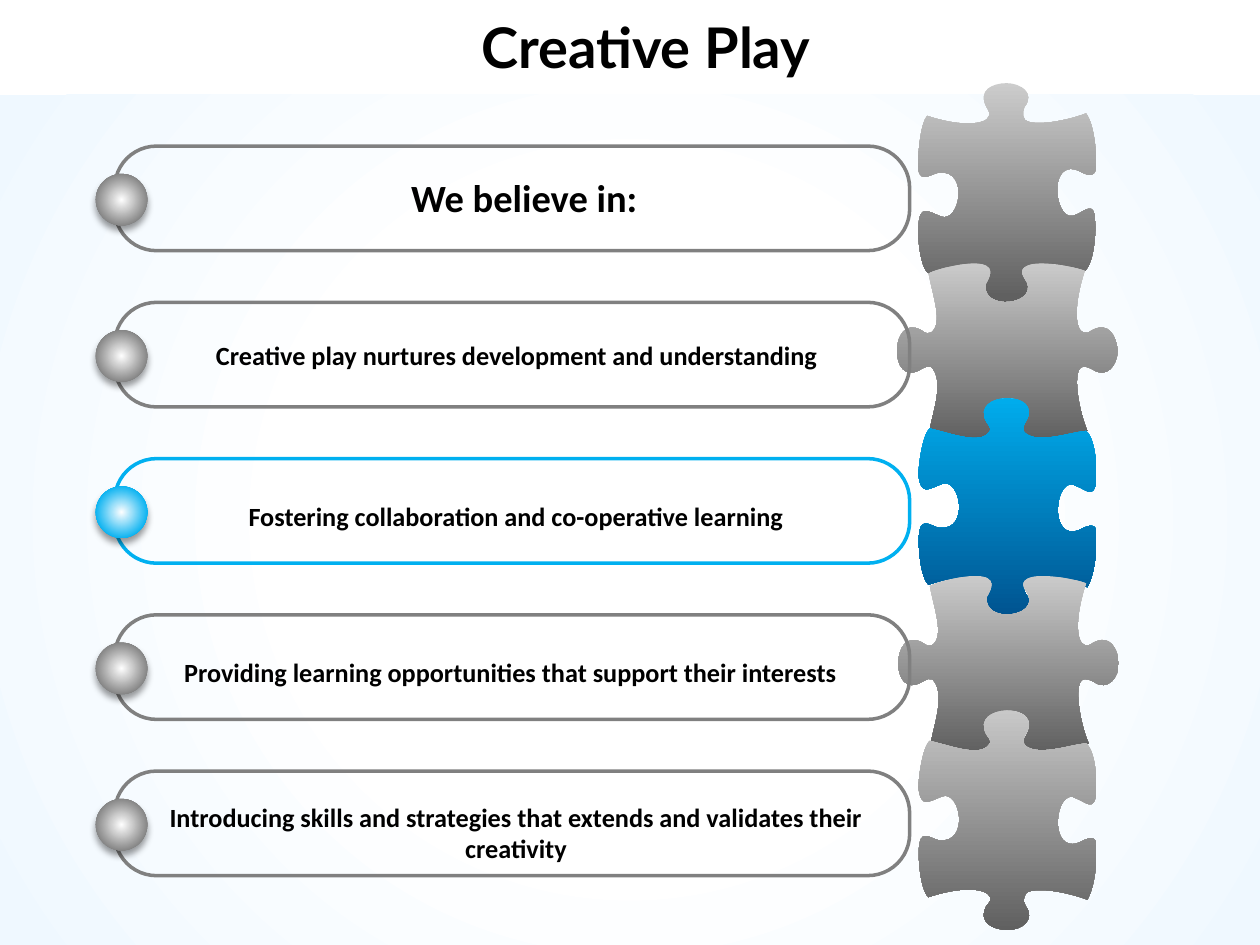
"""Build the Creative Play slide: five labelled pills beside a column of puzzle pieces."""
from lxml import etree
from pptx import Presentation
from pptx.dml.color import RGBColor
from pptx.enum.shapes import MSO_SHAPE
from pptx.enum.text import MSO_ANCHOR, PP_ALIGN
from pptx.oxml import parse_xml
from pptx.oxml.ns import nsdecls, qn
from pptx.util import Pt

RECT, PILL, BALL = MSO_SHAPE.RECTANGLE, MSO_SHAPE.ROUNDED_RECTANGLE, MSO_SHAPE.OVAL
CENTER, TOP = PP_ALIGN.CENTER, MSO_ANCHOR.TOP
PX = 9144
PITCH = 124

THEME = {
    "white": "FFFFFF", "sky": "EFF8FF", "ink": "000000",
    "grey": "808080", "blue": "00B0F0",
    "piece_grey": ("CCCCCC", "606060"), "piece_blue": ("00B0F0", "005390"),
    "title": ("Lato", 32), "heading": ("Calibri", 22), "body": ("Calibri", 15),
}

TITLE = ("Creative Play", "title", (25, 5, 975, 64))

ROWS = [
    ("We believe in: ", "heading", "grey", (305, 133, 229, 47)),
    ("Creative play nurtures development and understanding ", "body", "grey", (122, 264, 581, 35)),
    ("Fostering collaboration and co-operative learning", "body", "blue", (119, 392, 581, 35)),
    ("Providing learning opportunities that support their interests ", "body", "grey", (117, 516, 581, 35)),
    ("Introducing skills and strategies that extends and validates their creativity",
     "body", "grey", (119, 631, 581, 61)),
]

TOP_PIECE = [
    (799, 66),
    (810, 66, 822, 74, 813, 85), (812, 87, 812, 89, 812, 92), (812, 102, 844, 97, 862, 90),
    (869, 100, 870, 122, 870, 131), (870, 139, 866, 141, 857, 136), (830, 123, 837, 182, 855, 170),
    (860, 168, 869, 159, 869, 175), (870, 180, 869, 208, 861, 215), (852, 212, 824, 204, 812, 213),
    (811, 215, 811, 218, 813, 221), (830, 247, 769, 246, 783, 221), (787, 217, 786, 211, 778, 210),
    (770, 208, 756, 210, 737, 217), (730, 212, 728, 186, 729, 179), (730, 162, 737, 168, 747, 172),
    (762, 177, 769, 135, 746, 137), (740, 137, 731, 146, 729, 135), (728, 128, 730, 98, 736, 92),
    (763, 101, 783, 99, 785, 92), (786, 91, 785, 88, 783, 85), (776, 72, 787, 66, 799, 66),
]
SIDE_PIECE = [
    (887, 278),
    (887, 290, 878, 301, 867, 293), (865, 292, 863, 291, 860, 291), (850, 291, 856, 326, 863, 342),
    (854, 343, 833, 349, 823, 348), (817, 347, 808, 343, 814, 335), (828, 309, 774, 310, 782, 332),
    (786, 340, 791, 344, 776, 348), (769, 349, 747, 342, 738, 341), (740, 328, 750, 302, 739, 291),
    (737, 290, 735, 291, 731, 293), (705, 309, 706, 248, 731, 262), (735, 265, 737, 265, 739, 264),
    (749, 257, 740, 234, 737, 217), (745, 213, 764, 209, 774, 209), (791, 210, 786, 219, 782, 226),
    (780, 247, 823, 242, 815, 224), (812, 219, 807, 213, 818, 210), (828, 207, 854, 212, 861, 215),
    (852, 242, 853, 262, 860, 264), (862, 265, 864, 264, 867, 262), (880, 255, 886, 267, 887, 278),
]
LOWER_PIECE = [
    (800, 490),
    (811, 490, 822, 482, 814, 471), (813, 469, 812, 467, 813, 464), (813, 454, 845, 459, 863, 466),
    (869, 456, 871, 434, 870, 425), (871, 417, 867, 415, 858, 420), (831, 433, 837, 374, 855, 386),
    (861, 388, 869, 397, 870, 381), (871, 376, 870, 348, 862, 342), (849, 343, 823, 353, 813, 343),
    (812, 341, 812, 338, 814, 335), (830, 309, 769, 310, 783, 335), (786, 339, 787, 341, 785, 343),
    (778, 353, 755, 344, 738, 340), (732, 345, 729, 370, 729, 377), (731, 394, 737, 388, 748, 384),
    (762, 379, 770, 421, 746, 419), (741, 419, 732, 410, 730, 421), (728, 428, 730, 458, 737, 464),
    (764, 455, 783, 457, 786, 464), (787, 465, 786, 468, 783, 471), (776, 484, 788, 490, 800, 490),
]
PIECES = [
    (TOP_PIECE, (0, 0), "piece_grey", 94),
    (SIDE_PIECE, (0, 0), "piece_grey", 100),
    (LOWER_PIECE, (0, 0), "piece_blue", 100),
    (SIDE_PIECE, (1, 2 * PITCH), "piece_grey", 100),
    (LOWER_PIECE, (0, 2 * PITCH), "piece_grey", 100),
]

LINEAR = '<a:lin ang="5400000" scaled="0"/>'
RADIAL = '<a:path path="circle"><a:fillToRect l="50000" t="50000" r="50000" b="50000"/></a:path>'


def rgb(name):
    return RGBColor.from_string(THEME[name])


def emu(box):
    return [v * PX for v in box]


def set_gradient(sp, stops, direction):
    sp.fill.gradient()
    old = sp._element.spPr.find(qn("a:gradFill"))
    marks = "".join(f'<a:gs pos="{pos * 1000}"><a:srgbClr val="{color}"/></a:gs>' for pos, color in stops)
    new = parse_xml(f'<a:gradFill {nsdecls("a")} rotWithShape="1">'
                    f"<a:gsLst>{marks}</a:gsLst>{direction}</a:gradFill>")
    old.getparent().replace(old, new)
    sp.line.fill.background()
    sp.shadow.inherit = False


def add_ball_shadow(sp):
    sp._element.spPr.find(qn("a:effectLst")).append(parse_xml(
        f'<a:outerShdw {nsdecls("a")} blurRad="{Pt(4)}" dist="{Pt(3)}" dir="5400000" rotWithShape="0">'
        f'<a:srgbClr val="{THEME["ink"]}"><a:alpha val="40000"/></a:srgbClr></a:outerShdw>'))


def curve_outline(sp):
    lines = list(sp._element.iter(qn("a:lnTo")))
    for i in range(0, len(lines), 3):
        curve = etree.Element(qn("a:cubicBezTo"))
        lines[i].addprevious(curve)
        for line in lines[i:i + 3]:
            curve.append(line[0])
            line.getparent().remove(line)


def add_piece(s, outline, shift, tones, dark_at):
    dx, dy = shift
    points = [(c[i] + dx, c[i + 1] + dy) for c in outline for i in range(0, len(c), 2)]
    builder = s.shapes.build_freeform(*points[0], scale=PX)
    builder.add_line_segments(points[1:], close=True)
    sp = builder.convert_to_shape()
    curve_outline(sp)
    light, dark = THEME[tones]
    set_gradient(sp, [(0, light), (dark_at, dark), (100, dark)], LINEAR)


def add_text(s, text, style, box):
    tf = s.shapes.add_textbox(*emu(box)).text_frame
    tf.word_wrap = True
    tf.vertical_anchor = TOP
    p = tf.paragraphs[0]
    p.alignment = CENTER
    r = p.add_run()
    r.text = text
    font, size = THEME[style]
    r.font.name, r.font.size, r.font.bold = font, Pt(size), True
    r.font.color.rgb = rgb("ink")


def add_row(s, index, text, style, color, box):
    y = 116 + index * PITCH
    pill = s.shapes.add_shape(PILL, *emu((91, y, 631, 83)))
    pill.adjustments[0] = 0.4
    pill.fill.background()
    pill.line.color.rgb = rgb(color)
    pill.line.width = Pt(2)
    pill.shadow.inherit = False
    ball = s.shapes.add_shape(BALL, *emu((76, y + 22, 41, 41)))
    set_gradient(ball, [(0, THEME["white"]), (75, THEME[color]), (100, THEME[color])], RADIAL)
    add_ball_shadow(ball)
    add_text(s, text, style, box)


def main():
    prs = Presentation()
    prs.slide_width, prs.slide_height = emu((1000, 750))
    s = prs.slides.add_slide(prs.slide_layouts[6])
    backdrop = s.shapes.add_shape(RECT, *emu((0, 75, 1000, 675)))
    set_gradient(backdrop, [(0, THEME["white"]), (43, THEME["white"]), (100, THEME["sky"])], RADIAL)
    for piece in PIECES:
        add_piece(s, *piece)
    add_text(s, *TITLE)
    for index, row in enumerate(ROWS):
        add_row(s, index, *row)
    prs.save("out.pptx")


if __name__ == "__main__":
    main()
